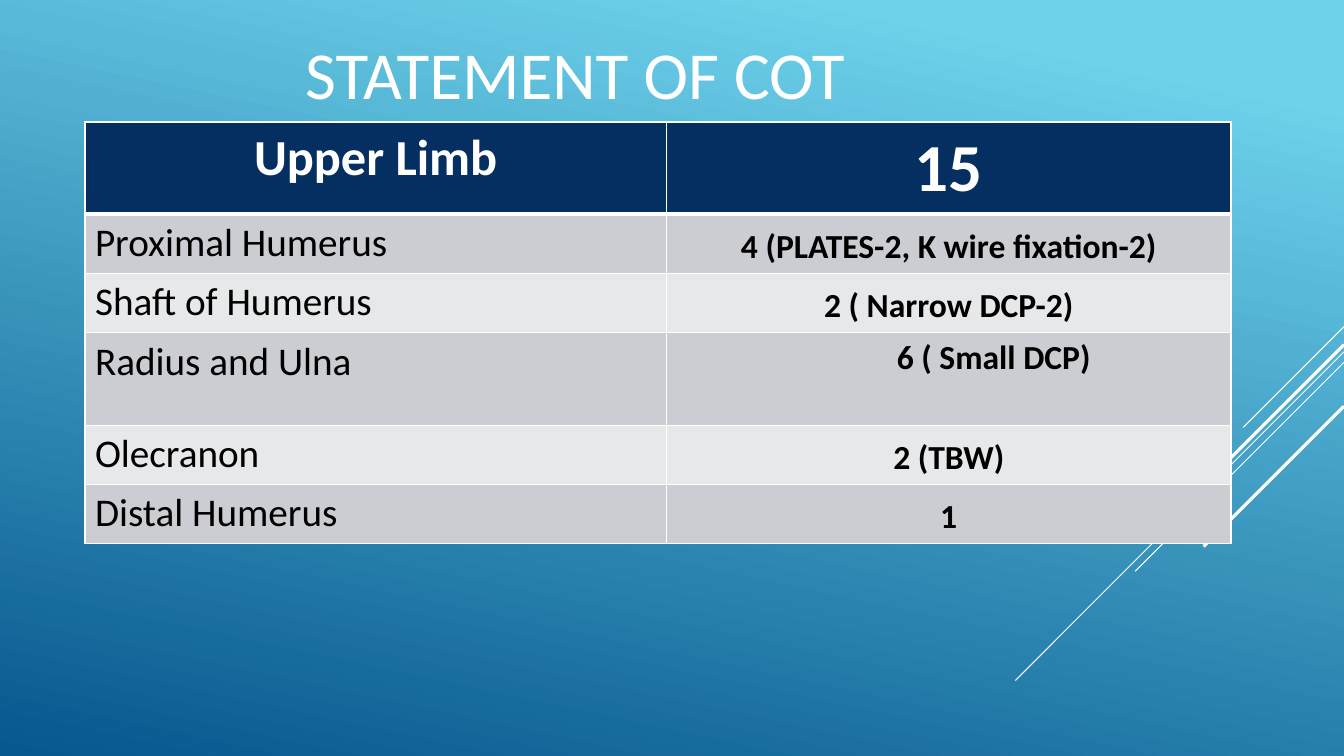
from lxml.etree import SubElement
from pptx import Presentation
from pptx.dml.color import RGBColor
from pptx.enum.shapes import MSO_CONNECTOR
from pptx.enum.text import MSO_ANCHOR, PP_ALIGN
from pptx.oxml import parse_xml
from pptx.oxml.ns import nsdecls, qn
from pptx.util import Pt


def color(value):
    return RGBColor.from_string(value)


def add_text(paragraph, text, size, value, bold=False):
    run = paragraph.add_run()
    run.text = text
    run.font.name = "Calibri"
    run.font.size = Pt(size)
    run.font.bold = bold
    run.font.color.rgb = color(value)


presentation = Presentation()
presentation.slide_width = Pt(960)
presentation.slide_height = Pt(540)
slide = presentation.slides.add_slide(presentation.slide_layouts[6])

background = slide.background.fill
background.gradient()
background.gradient_angle = 258
for stop, position, value in zip(background.gradient_stops, (0.1, 1), ("6ED2EB", "06588E")):
    stop.position = position
    stop.color.rgb = color(value)

diagonals = [
    (233.3, 72, 0.75),
    (251.3, 234.7, 0.75),
    (258.8, 149.2, 0.75),
    (246.2, 137.7, 2.25),
    (290.2, 100.2, 2.25),
]
for top, reach, width in diagonals:
    connector = slide.shapes.add_connector(
        MSO_CONNECTOR.STRAIGHT, Pt(960), Pt(top), Pt(960 - reach), Pt(top + reach))
    connector.line.color.rgb = color("FFFFFF")
    connector.line.width = Pt(width)
    SubElement(connector.element.spPr, qn("a:effectLst"))

title = slide.shapes.add_textbox(Pt(218), Pt(17.3), Pt(632), Pt(69.8))
frame = title.text_frame
frame.word_wrap = True
frame.margin_left = 0
frame.vertical_anchor = MSO_ANCHOR.MIDDLE
add_text(frame.paragraphs[0], "STATEMENT OF COT", 48, "FFFFFF")

rows = [
    ("Upper Limb", "15"),
    ("Proximal Humerus", "4 (PLATES-2, K wire fixation-2)"),
    ("Shaft of Humerus", "2 ( Narrow DCP-2)"),
    ("Radius and Ulna", "6 ( Small DCP)"),
    ("Olecranon", "2 (TBW)"),
    ("Distal Humerus", "1"),
]
row_heights = [66, 42.3, 42.3, 66, 42.3, 42.3]
table = slide.shapes.add_table(
    len(rows), 2, Pt(60.7), Pt(87.1), Pt(818.6), Pt(sum(row_heights))).table
table.columns[0].width = Pt(415.4)
table.columns[1].width = Pt(403.2)

for row_index, row in enumerate(rows):
    table.rows[row_index].height = Pt(row_heights[row_index])
    header = row_index == 0
    for column_index, text in enumerate(row):
        cell = table.cell(row_index, column_index)
        cell.fill.solid()
        fill = "052F61" if header else ("E7E8EA", "CCCDD2")[row_index % 2]
        cell.fill.fore_color.rgb = color(fill)
        paragraph = cell.text_frame.paragraphs[0]
        if header:
            paragraph.alignment = PP_ALIGN.CENTER
            add_text(paragraph, text, (36, 48)[column_index], "FFFFFF", True)
        elif column_index == 0:
            add_text(paragraph, text, 28, "000000")
        else:
            add_text(paragraph, text, 24, "000000", True)
            if row[0] == "Radius and Ulna":
                cell.margin_left = Pt(164.5)
            else:
                paragraph.alignment = PP_ALIGN.CENTER
                paragraph.line_spacing = 1.15
                cell.vertical_anchor = MSO_ANCHOR.MIDDLE
                cell.margin_left = cell.margin_right = Pt(5)
                cell.margin_top = cell.margin_bottom = 0

        properties = cell._tc.get_or_add_tcPr()
        for position, side in enumerate(("lnL", "lnR", "lnT", "lnB")):
            thick = (header and side == "lnB") or (row_index == 1 and side == "lnT")
            properties.insert(position, parse_xml(
                f'<a:{side} {nsdecls("a")} w="{Pt(3 if thick else 1)}"><a:solidFill>'
                f'<a:srgbClr val="FFFFFF"/></a:solidFill></a:{side}>'))

presentation.save("out.pptx")
